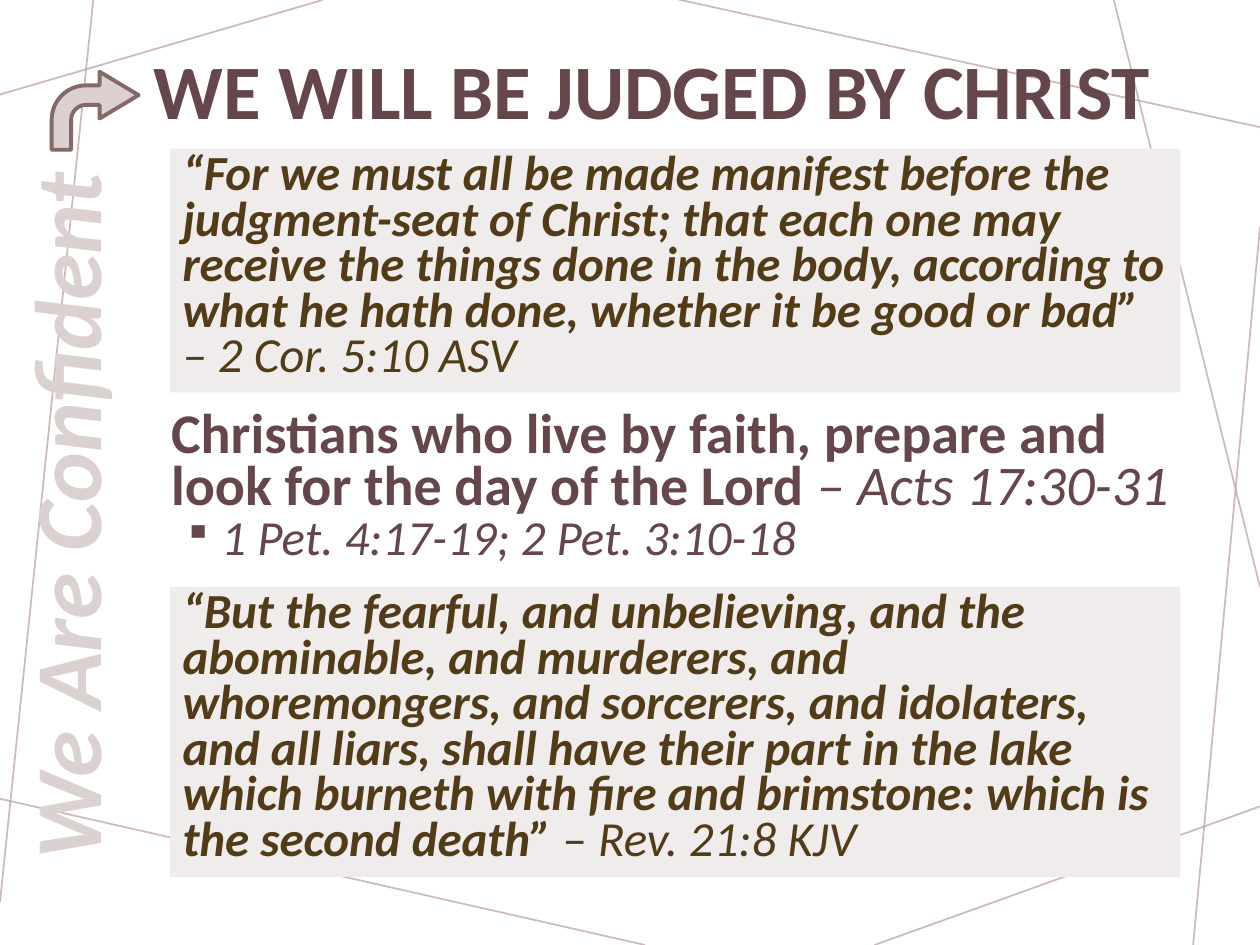
from dataclasses import dataclass
from lxml.etree import SubElement as Sub
from pptx import Presentation
from pptx.dml.color import RGBColor as Rgb
from pptx.enum.shapes import MSO_CONNECTOR as Conn, MSO_SHAPE as Shape
from pptx.enum.text import MSO_ANCHOR as Anchor, PP_ALIGN as Align
from pptx.oxml.ns import qn
from pptx.util import Pt

HEX = {"line": "BA9CA0", "text": "65464A", "pale": "DBD1D1",
       "edge": "856969", "quote": "523C18", "panel": "F0ECEC"}
FONT = "Calibri"


@dataclass
class Box:
    left: float
    top: float
    width: float
    height: float

    def pts(self) -> list:
        return [Pt(n) for n in (self.left, self.top, self.width, self.height)]


@dataclass
class Run:
    text: str
    size: float
    hue: str
    bold: bool = False
    slant: bool = False


@dataclass
class Quote:
    box: Box
    runs: list


def color(name: str) -> Rgb:
    return Rgb.from_string(HEX[name])


def write(para, runs: list, space=None, align=Align.LEFT) -> None:
    para.alignment = align
    if space is not None:
        para.line_spacing = space
    for part in runs:
        run = para.add_run()
        run.text = part.text
        font = run.font
        font.name, font.size = FONT, Pt(part.size)
        font.bold, font.italic = part.bold, part.slant
        font.color.rgb = color(part.hue)


def add_line(slide, x1: float, y1: float, x2: float, y2: float) -> None:
    line = slide.shapes.add_connector(
        Conn.STRAIGHT, Pt(x1), Pt(y1), Pt(x2), Pt(y2))
    line.line.width = Pt(1)
    line.line.color.rgb = color("line")
    props = line._element.spPr
    tint = next(props.iter(qn("a:srgbClr")))
    Sub(tint, qn("a:alpha")).set("val", "70000")
    Sub(props, qn("a:effectLst"))


def add_text(slide, box: Box, wrap: bool = True, anchor=Anchor.TOP):
    shape = slide.shapes.add_textbox(*box.pts())
    frame = shape.text_frame
    frame.word_wrap = wrap
    frame.vertical_anchor = anchor
    return shape


def add_bullet(para) -> None:
    props = para._p.get_or_add_pPr()
    props.set("marL", str(Pt(28.8)))
    props.set("indent", str(Pt(-21.6)))
    Sub(props, qn("a:buSzPct")).set("val", "80000")
    Sub(props, qn("a:buChar")).set("char", "▪")


def add_quote(slide, quote: Quote) -> None:
    panel = slide.shapes.add_shape(Shape.RECTANGLE, *quote.box.pts())
    panel.shadow.inherit = False
    panel.fill.solid()
    panel.fill.fore_color.rgb = color("panel")
    panel.line.fill.background()
    frame = panel.text_frame
    frame.word_wrap = True
    frame.vertical_anchor = Anchor.TOP
    write(frame.paragraphs[0], quote.runs, Pt(26))


LINES = [
    (184.3, 0, 0, 54), (53.3, 0, 0, 515.5), (368.6, 540, -2.9, 455.8),
    (720, 460.8, 499.7, 540), (720, 129.6, 681.8, 540),
    (720, 335.5, 636.5, 0), (720, 72.7, 385.9, -0.7),
]
QUOTES = [
    Quote(Box(97.2, 85, 577.4, 139.3), [
        Run("“For we must all be made manifest before the judgment-seat of "
            "Christ; that each one may receive the things done in the body, "
            "according to what he hath done, whether it be good or bad” ",
            28, "quote", True, True),
        Run("– 2 Cor. 5:10 ASV", 28, "quote", slant=True)]),
    Quote(Box(97.2, 335.5, 577.4, 165.6), [
        Run("“But the fearful, and unbelieving, and the abominable, and "
            "murderers, and whoremongers, and sorcerers, and idolaters, and "
            "all liars, shall have their part in the lake which burneth with "
            "fire and brimstone: which is the second death” ",
            28, "quote", True, True),
        Run("– ", 28, "quote"),
        Run("Rev. 21:8 KJV", 28, "quote", slant=True)]),
]


def main() -> None:
    deck = Presentation()
    deck.slide_width, deck.slide_height = Pt(720), Pt(540)
    slide = deck.slides.add_slide(deck.slide_layouts[6])

    # Background lines
    for ends in LINES:
        add_line(slide, *ends)

    # Main point with its references
    body = add_text(slide, Box(90.7, 231.8, 599.8, 105.1)).text_frame
    write(body.paragraphs[0], [
        Run("Christians who live by faith, prepare and look for the day of "
            "the Lord ", 32, "text", True),
        Run("– Acts 17:30-31", 32, "text", slant=True)], Pt(30))
    refs = body.add_paragraph()
    add_bullet(refs)
    write(refs, [Run("1 Pet. 4:17-19; 2 Pet. 3:10-18", 28, "text",
                     slant=True)], Pt(28))

    # Title
    title = add_text(slide, Box(80.6, 31.7, 639.4, 44.6),
                     anchor=Anchor.MIDDLE).text_frame
    write(title.paragraphs[0],
          [Run("WE WILL BE JUDGED BY CHRIST", 44, "text", True)], 0.9)

    # Bent arrow from the side label to the title
    arrow = slide.shapes.add_shape(
        Shape.BENT_ARROW, *Box(29.5, 41, 49.7, 44.6).pts())
    for i, ratio in enumerate((0.25, 0.3, 0.5, 0.44)):
        arrow.adjustments[i] = ratio
    arrow.shadow.inherit = False
    arrow.fill.solid()
    arrow.fill.fore_color.rgb = color("pale")
    arrow.line.color.rgb = color("edge")
    arrow.line.width = Pt(2.25)

    # Side label
    label = add_text(slide, Box(-169.9, 258.5, 413.3, 72.7), wrap=False)
    label.rotation = 270
    write(label.text_frame.paragraphs[0],
          [Run("We Are Confident", 54, "pale", True, True)],
          align=Align.CENTER)

    # Scripture panels
    for quote in QUOTES:
        add_quote(slide, quote)

    deck.save("out.pptx")


if __name__ == "__main__":
    main()
